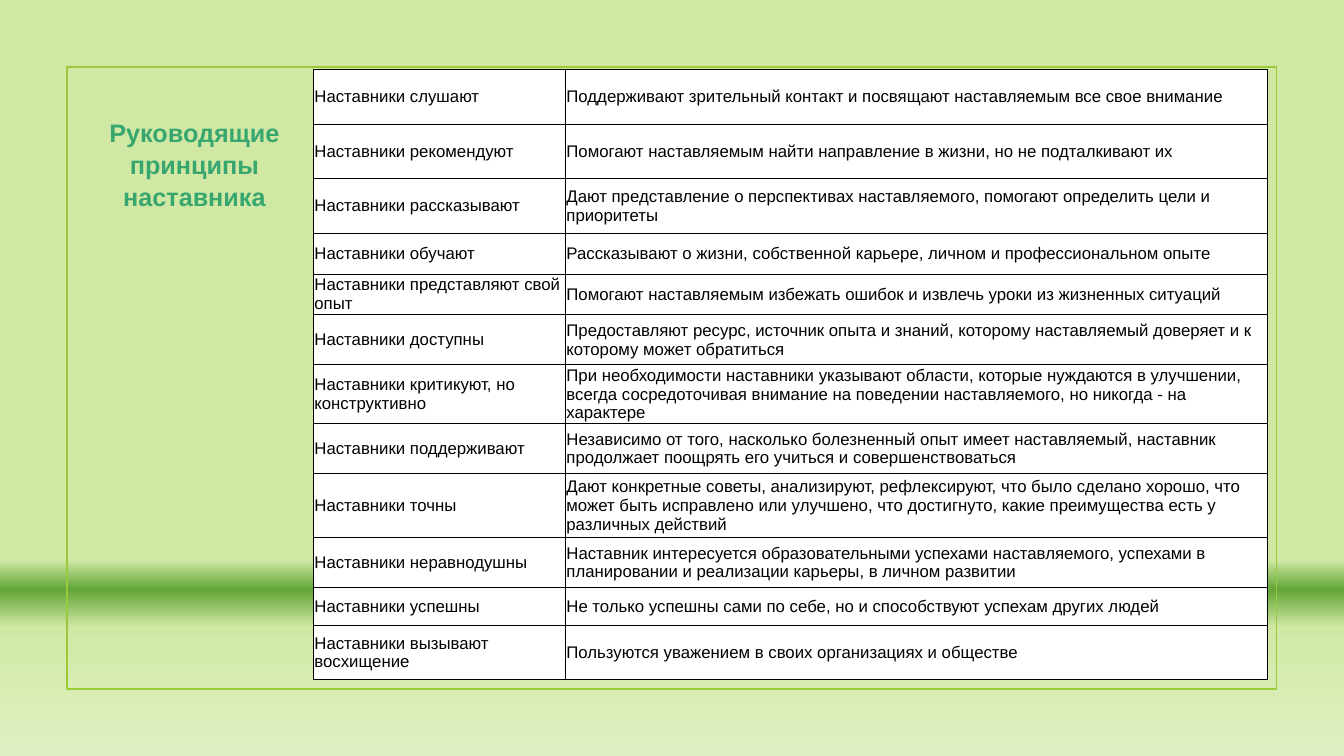
from lxml import etree
from pptx import Presentation
from pptx.dml.color import RGBColor
from pptx.enum.shapes import MSO_SHAPE
from pptx.enum.text import MSO_ANCHOR, PP_ALIGN
from pptx.oxml.ns import qn
from pptx.util import Pt

COLORS = {
    "frame": "99CB38",
    "title": "37A76F",
    "text": "000000",
    "border": "000000",
    "cell": "FFFFFF",
}
BACKGROUND_STOPS = [(74, "D1E8A5"), (78, "63A537"), (83, "D1E8A5"), (100, "E0EFC3")]
FONT = "Arial"
COLUMN_WIDTHS = [180, 501.4]
# Row height, principle, explanation
PRINCIPLES = [
    (39, "Наставники слушают",
     "Поддерживают зрительный контакт и посвящают наставляемым все свое внимание"),
    (39, "Наставники рекомендуют",
     "Помогают наставляемым найти направление в жизни, но не подталкивают их"),
    (39, "Наставники рассказывают",
     "Дают представление о перспективах наставляемого, помогают определить цели и приоритеты"),
    (29.2, "Наставники обучают",
     "Рассказывают о жизни, собственной карьере, личном и профессиональном опыте"),
    (29.2, "Наставники представляют свой опыт",
     "Помогают наставляемым избежать ошибок и извлечь уроки из жизненных ситуаций"),
    (35.7, "Наставники доступны",
     "Предоставляют ресурс, источник опыта и знаний, которому наставляемый доверяет "
     "и к которому может обратиться"),
    (42, "Наставники критикуют, но конструктивно",
     "При необходимости наставники указывают области, которые нуждаются в улучшении, "
     "всегда сосредоточивая внимание на поведении наставляемого, но никогда - на характере"),
    (35.7, "Наставники поддерживают",
     "Независимо от того, насколько болезненный опыт имеет наставляемый, наставник "
     "продолжает поощрять его учиться и совершенствоваться"),
    (45.7, "Наставники точны",
     "Дают конкретные советы, анализируют, рефлексируют, что было сделано хорошо, "
     "что может быть исправлено или улучшено, что достигнуто, какие преимущества есть "
     "у различных действий"),
    (35.7, "Наставники неравнодушны",
     "Наставник интересуется образовательными успехами наставляемого, успехами в "
     "планировании и реализации карьеры, в личном развитии"),
    (27.2, "Наставники успешны",
     "Не только успешны сами по себе, но и способствуют успехам других людей"),
    (38.7, "Наставники вызывают восхищение",
     "Пользуются уважением в своих организациях и обществе"),
]


def rgb(name):
    return RGBColor.from_string(COLORS[name])


def set_background(s):
    """Fill the slide with a vertical gradient of several stops."""
    fill = s.background.fill
    fill.gradient()
    grad = s.background._cSld.find(".//" + qn("a:gradFill"))
    stops = grad.find(qn("a:gsLst"))
    for stop in list(stops):
        stops.remove(stop)
    for position, color in BACKGROUND_STOPS:
        stop = etree.SubElement(stops, qn("a:gs"), pos=str(position * 1000))
        etree.SubElement(stop, qn("a:srgbClr"), val=color)
    grad.find(qn("a:lin")).set("ang", "5400000")


def style_font(font, size, color, bold=False):
    font.name = FONT
    font.size = Pt(size)
    font.bold = bold
    font.color.rgb = rgb(color)


def add_frame(s, left, top, width, height):
    sp = s.shapes.add_shape(MSO_SHAPE.RECTANGLE, Pt(left), Pt(top), Pt(width), Pt(height))
    sp.shadow.inherit = False
    sp.fill.background()
    sp.line.color.rgb = rgb("frame")
    sp.line.width = Pt(1.25)


def add_title(s, text, left, top, width, height):
    sp = s.shapes.add_textbox(Pt(left), Pt(top), Pt(width), Pt(height))
    tf = sp.text_frame
    tf.word_wrap = True
    p = tf.paragraphs[0]
    p.text = text
    p.alignment = PP_ALIGN.CENTER
    p.line_spacing = 1.05
    style_font(p.font, 18, "title", bold=True)


def set_borders(cell):
    tc_pr = cell._tc.get_or_add_tcPr()
    for i, side in enumerate(("a:lnL", "a:lnR", "a:lnT", "a:lnB")):
        line = etree.Element(qn(side), w=str(Pt(0.75)))
        fill = etree.SubElement(line, qn("a:solidFill"))
        etree.SubElement(fill, qn("a:srgbClr"), val=COLORS["border"])
        tc_pr.insert(i, line)


def fill_cell(cell, text):
    cell.margin_left = cell.margin_right = Pt(0.7)
    cell.margin_top = cell.margin_bottom = Pt(0.7)
    cell.vertical_anchor = MSO_ANCHOR.MIDDLE
    cell.fill.solid()
    cell.fill.fore_color.rgb = rgb("cell")
    set_borders(cell)
    p = cell.text_frame.paragraphs[0]
    p.text = text
    style_font(p.font, 12, "text")


def add_principles_table(s, left, top):
    height = sum(row[0] for row in PRINCIPLES)
    table = s.shapes.add_table(len(PRINCIPLES), len(COLUMN_WIDTHS), Pt(left), Pt(top),
                               Pt(sum(COLUMN_WIDTHS)), Pt(height)).table
    table.first_row = table.horz_banding = False
    for column, width in zip(table.columns, COLUMN_WIDTHS):
        column.width = Pt(width)
    for row, (row_height, *texts) in zip(table.rows, PRINCIPLES):
        row.height = Pt(row_height)
        for cell, text in zip(row.cells, texts):
            fill_cell(cell, text)


def main():
    prs = Presentation()
    prs.slide_width, prs.slide_height = Pt(960), Pt(540)
    s = prs.slides.add_slide(prs.slide_layouts[6])
    set_background(s)
    add_frame(s, 47.8, 48, 864, 444)
    add_principles_table(s, 223.9, 49.6)
    add_title(s, "Руководящие принципы наставника", 69.8, 79.2, 138.2, 72.7)
    prs.save("out.pptx")


if __name__ == "__main__":
    main()
